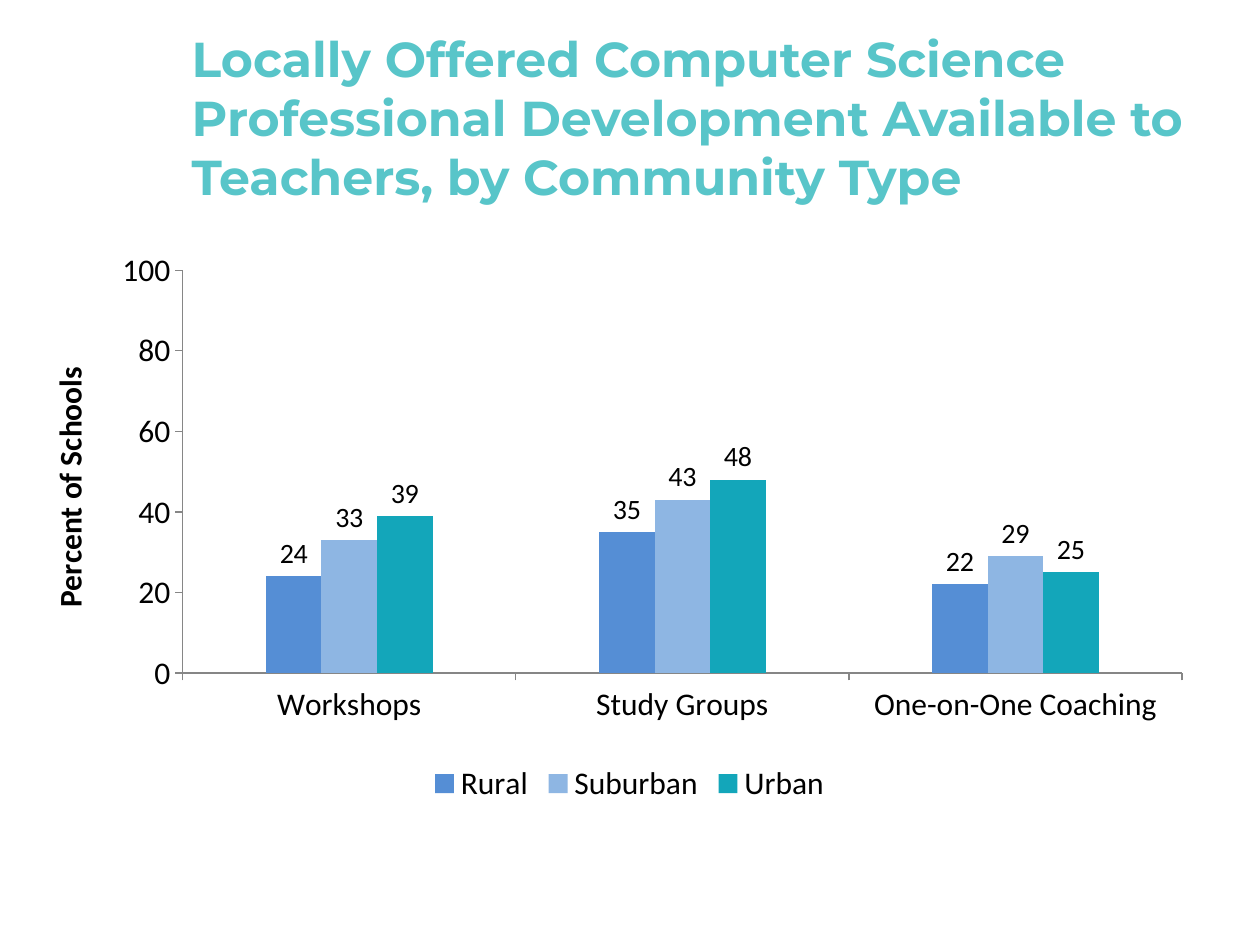
from dataclasses import dataclass

from pptx import Presentation
from pptx.chart.data import CategoryChartData
from pptx.dml.color import RGBColor
from pptx.enum.chart import XL_CHART_TYPE as ChartType
from pptx.enum.chart import XL_LABEL_POSITION as LabelPos
from pptx.enum.chart import XL_LEGEND_POSITION as LegendPos
from pptx.enum.chart import XL_TICK_MARK as TickMark
from pptx.enum.text import MSO_ANCHOR, MSO_AUTO_SIZE, PP_ALIGN
from pptx.oxml import parse_xml
from pptx.oxml.ns import nsdecls, qn
from pptx.util import Cm, Pt


@dataclass(frozen=True)
class Theme:
    title_font: str = "Montserrat"
    chart_font: str = "Calibri"
    title: RGBColor = RGBColor(0x58, 0xC5, 0xC9)
    text: RGBColor = RGBColor(0, 0, 0)
    axis: RGBColor = RGBColor(0x86, 0x86, 0x86)
    title_size: Pt = Pt(28)
    chart_size: Pt = Pt(18)
    label_size: Pt = Pt(16)


THEME = Theme()

CATEGORIES = ["Workshops", "Study Groups", "One-on-One Coaching"]
SERIES = [
    ("Rural", (24, 35, 22), RGBColor(0x55, 0x8E, 0xD5)),
    ("Suburban", (33, 43, 29), RGBColor(0x8E, 0xB6, 0xE3)),
    ("Urban", (39, 48, 25), RGBColor(0x13, 0xA6, 0xBA)),
]


def style_font(font, size, color=THEME.text, name=THEME.chart_font, bold=False):
    font.size, font.name, font.bold = size, name, bold
    font.color.rgb = color


def add_title(slide, box, text):
    sp = slide.shapes.title
    sp.left, sp.top, sp.width, sp.height = box
    tf = sp.text_frame
    tf.word_wrap = True
    tf.auto_size = MSO_AUTO_SIZE.NONE
    tf.vertical_anchor = MSO_ANCHOR.MIDDLE
    p = tf.paragraphs[0]
    p.alignment = PP_ALIGN.LEFT
    r = p.add_run()
    r.text = text
    style_font(r.font, THEME.title_size, THEME.title, THEME.title_font, True)


def set_plot_layout(chart, x, y, w, h):
    """Fix the inner plot area as fractions of the chart."""
    area = chart.plots[0]._element.getparent()
    for old in area.findall(qn("c:layout")):
        area.remove(old)
    sizes = "".join(f'<c:{tag} val="{val}"/>'
                    for tag, val in zip("xywh", (x, y, w, h)))
    area.insert(0, parse_xml(
        f'<c:layout {nsdecls("c")}><c:manualLayout>'
        '<c:layoutTarget val="inner"/><c:xMode val="edge"/>'
        f'<c:yMode val="edge"/>{sizes}</c:manualLayout></c:layout>'))


def add_column_chart(slide, box, axis_title):
    data = CategoryChartData(number_format="0")
    data.categories = CATEGORIES
    for name, values, _ in SERIES:
        data.add_series(name, values)
    chart = slide.shapes.add_chart(ChartType.COLUMN_CLUSTERED, *box, data).chart
    chart.has_title = False
    style_font(chart.font, THEME.chart_size)

    # Columns and their value labels
    plot = chart.plots[0]
    plot.gap_width, plot.overlap = 300, 0
    plot.vary_by_categories = False
    for series, (_, _, color) in zip(plot.series, SERIES):
        series.format.fill.solid()
        series.format.fill.fore_color.rgb = color
        labels = series.data_labels
        labels.show_value = True
        labels.position = LabelPos.OUTSIDE_END
        style_font(labels.font, THEME.label_size)

    # Axes
    for axis in (chart.category_axis, chart.value_axis):
        axis.has_major_gridlines = False
        axis.major_tick_mark = TickMark.OUTSIDE
        axis.minor_tick_mark = TickMark.NONE
        axis.format.line.color.rgb = THEME.axis
        axis.format.line.width = Pt(0.75)
    value = chart.value_axis
    value.minimum_scale, value.maximum_scale, value.major_unit = 0, 100, 20
    r = value.axis_title.text_frame.paragraphs[0].add_run()
    r.text = axis_title
    style_font(r.font, THEME.chart_size, bold=True)

    # Legend and plot area
    chart.has_legend = True
    chart.legend.position = LegendPos.BOTTOM
    chart.legend.include_in_layout = False
    set_plot_layout(chart, 0.12, 0.05, 0.85, 0.71)


def main():
    prs = Presentation()
    prs.slide_width, prs.slide_height = Cm(25.4), Cm(19.05)
    slide = prs.slides.add_slide(prs.slide_layouts[5])
    add_title(slide, (Cm(3.61), Cm(0.76), Cm(20.52), Cm(3.18)),
              "Locally Offered Computer Science Professional Development "
              "Available to Teachers, by Community Type")
    add_column_chart(slide, (Cm(0.84), Cm(4.88), Cm(23.7), Cm(11.43)),
                     "Percent of Schools")
    prs.save("out.pptx")


if __name__ == "__main__":
    main()
